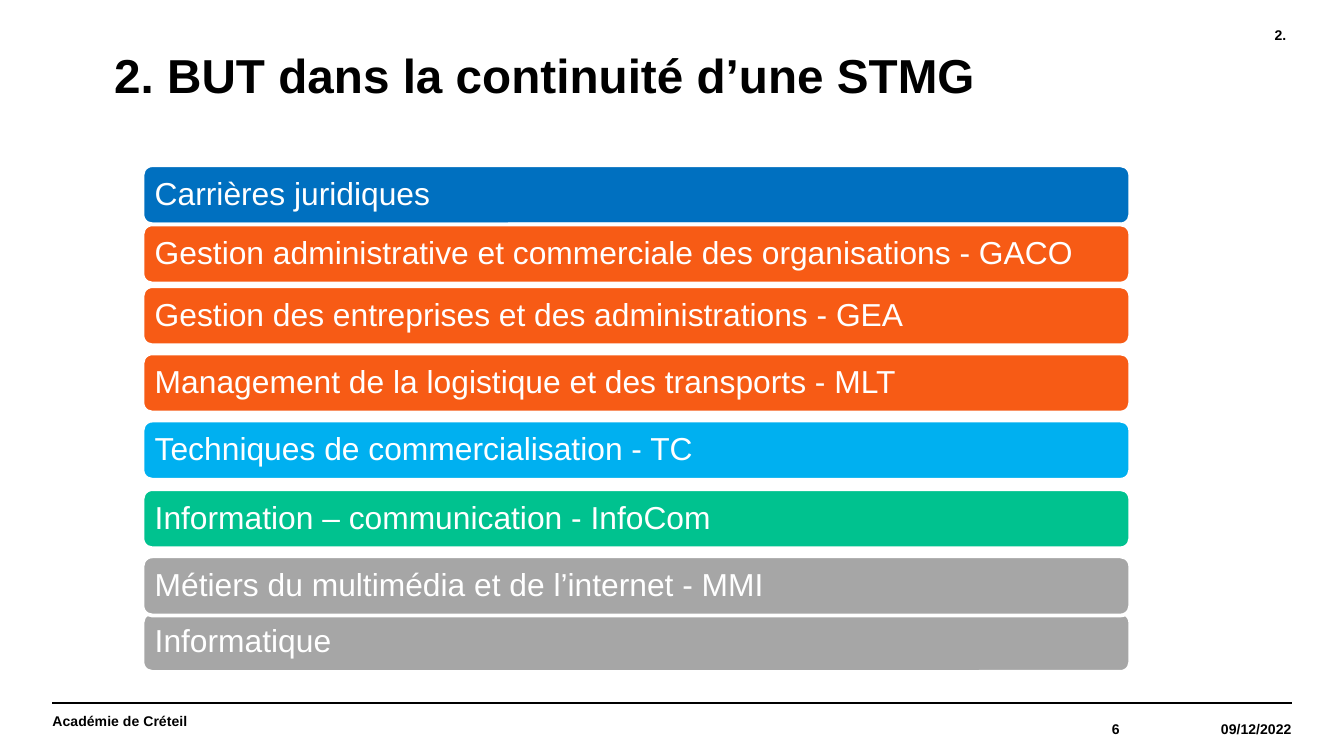
from lxml.etree import SubElement
from pptx import Presentation
from pptx.dml.color import RGBColor
from pptx.enum.shapes import MSO_CONNECTOR, MSO_SHAPE
from pptx.enum.text import MSO_ANCHOR, PP_ALIGN
from pptx.oxml.ns import qn
from pptx.util import Inches, Pt

WIDE = 10
HIGH = WIDE * 9 / 16
EDGE = 0.39
RIGHT = WIDE - EDGE
FOOT = 5.23
BAR_LEFT, BAR_WIDE, BAR_HIGH = 1.06, 7.35, 0.44

BLACK = RGBColor(0, 0, 0)
WHITE = RGBColor(255, 255, 255)
BLUE = RGBColor(0x00, 0x70, 0xC0)
ORANGE = RGBColor(0xF7, 0x5B, 0x15)
SKY = RGBColor(0x00, 0xB0, 0xF0)
GREEN = RGBColor(0x00, 0xC2, 0x8F)
GREY = RGBColor(0xA6, 0xA6, 0xA6)

# The lowest bar tucks under the one above it, so it is drawn first.
BARS = [
    (1.23, BLUE, "Carrières juridiques"),
    (1.67, ORANGE, "Gestion administrative et commerciale des organisations - GACO"),
    (2.13, ORANGE, "Gestion des entreprises et des administrations - GEA"),
    (2.63, ORANGE, "Management de la logistique et des transports - MLT"),
    (3.13, SKY, "Techniques de commercialisation - TC"),
    (3.64, GREEN, "Information – communication - InfoCom"),
    (4.56, GREY, "Informatique"),
    (4.14, GREY, "Métiers du multimédia et de l’internet - MMI"),
]


def write(shape, text, size, color, bold=False, align=PP_ALIGN.LEFT,
          anchor=MSO_ANCHOR.MIDDLE, inset=(0, 0, 0, 0), pitch=1.0):
    """Put one styled paragraph in a shape; inset is left, top, right, bottom."""
    frame = shape.text_frame
    frame.word_wrap = True
    frame.vertical_anchor = anchor
    (frame.margin_left, frame.margin_top,
     frame.margin_right, frame.margin_bottom) = map(Inches, inset)
    line = frame.paragraphs[0]
    line.text = text
    line.alignment = align
    line.line_spacing = pitch
    font = line.font
    font.name, font.size, font.bold = "Arial", Pt(size), bold
    font.color.rgb = color


def label(slide, box, text, size=7.5, **style):
    shape = slide.shapes.add_textbox(*map(Inches, box))
    write(shape, text, size, BLACK, bold=True, **style)


def bar(slide, top, color, text):
    shape = slide.shapes.add_shape(
        MSO_SHAPE.ROUNDED_RECTANGLE,
        *map(Inches, (BAR_LEFT, top, BAR_WIDE, BAR_HIGH)))
    shape.shadow.inherit = False
    shape.fill.solid()
    shape.fill.fore_color.rgb = color
    shape.line.color.rgb = WHITE
    shape.line.width = Pt(2)
    write(shape, text, 17, WHITE, inset=[0.07] * 4, pitch=0.9)


def rule(slide, top):
    line = slide.shapes.add_connector(
        MSO_CONNECTOR.STRAIGHT, *map(Inches, (EDGE, top, RIGHT, top)))
    line.line.color.rgb = BLACK
    line.line.width = Pt(0.8)
    SubElement(line._element.spPr, qn("a:effectLst"))


def footer(slide):
    rule(slide, FOOT)
    label(slide, (EDGE, FOOT, 6.46, EDGE), "Académie de Créteil",
          inset=(0, 0, 0, 0.12))
    for left, wide, text in [(6.85, 1.48, "6"), (8.33, 1.28, "09/12/2022")]:
        label(slide, (left, FOOT, wide, EDGE), text, align=PP_ALIGN.RIGHT)


def main():
    deck = Presentation()
    deck.slide_width, deck.slide_height = Inches(WIDE), Inches(HIGH)
    slide = deck.slides.add_slide(deck.slide_layouts[6])
    label(slide, (0.85, EDGE, 8.16, 0.45), "2. BUT dans la continuité d’une STMG",
          size=25.5, anchor=MSO_ANCHOR.TOP, pitch=0.9)
    label(slide, (3.62, 0.2, 5.98, EDGE), "2.", align=PP_ALIGN.RIGHT,
          anchor=MSO_ANCHOR.TOP, inset=(0, 0, 0.03, 0))
    for top, color, text in BARS:
        bar(slide, top, color, text)
    footer(slide)
    deck.save("out.pptx")


if __name__ == "__main__":
    main()
